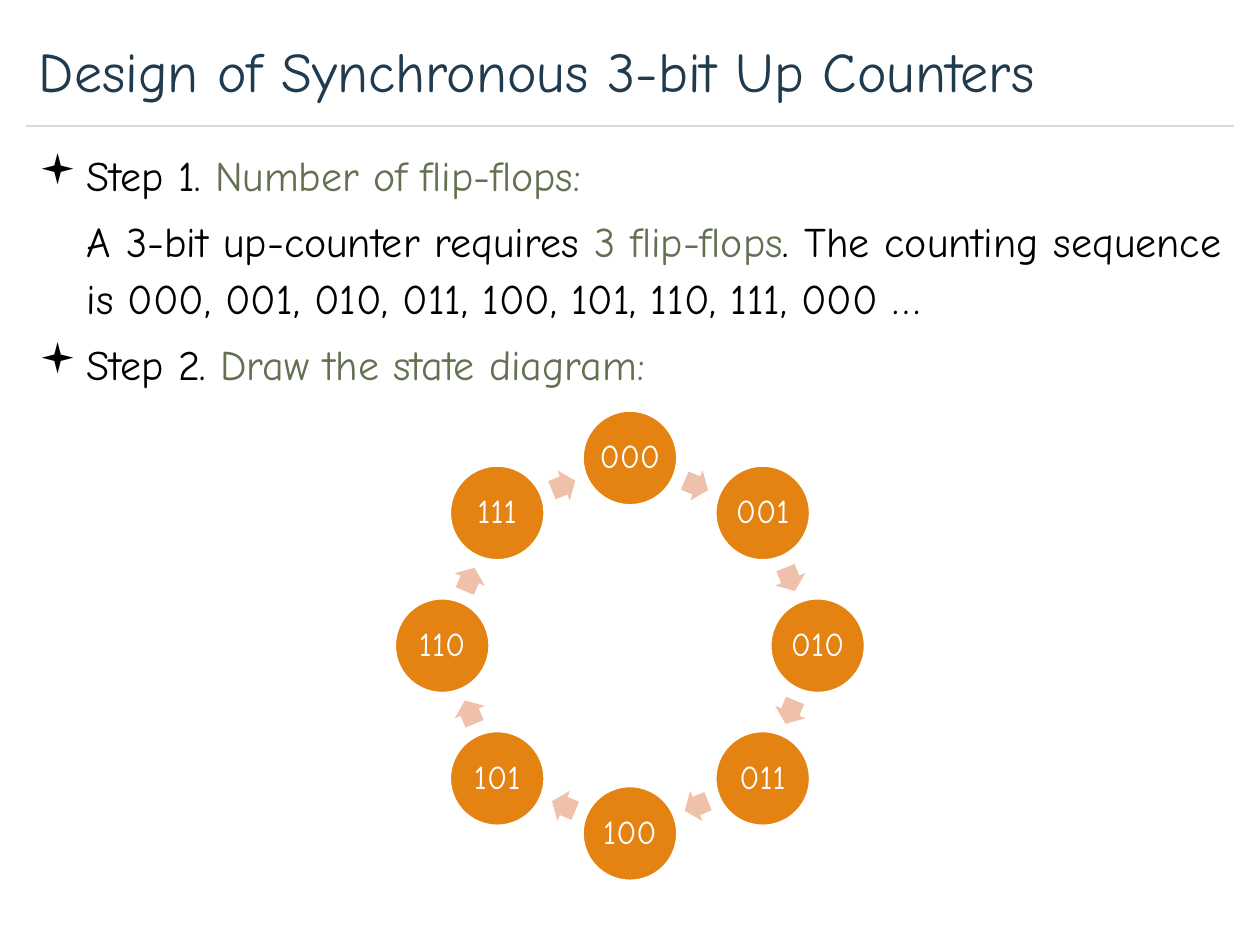
from math import cos, pi, radians, sin

from pptx import Presentation
from pptx.dml.color import RGBColor
from pptx.enum.shapes import MSO_CONNECTOR, MSO_SHAPE
from pptx.enum.text import MSO_ANCHOR, PP_ALIGN
from pptx.oxml.ns import qn
from pptx.util import Inches, Pt
from lxml.etree import SubElement

FONT = "Comic Neue"
NAVY = RGBColor(0x20, 0x3A, 0x4E)
BLACK = RGBColor(0, 0, 0)
OLIVE = RGBColor(0x63, 0x70, 0x52)
ORANGE = RGBColor(0xE4, 0x83, 0x12)
PEACH = RGBColor(0xEF, 0xC1, 0xAB)
WHITE = RGBColor(0xFF, 0xFF, 0xFF)
GREY = RGBColor(0xD9, 0xD9, 0xD9)

WIDTH, HEIGHT = 10, 7.5
MARGIN = 0.21
CONTENT = WIDTH - 2 * MARGIN
RULE_Y = 1

prs = Presentation()
prs.slide_width, prs.slide_height = Inches(WIDTH), Inches(HEIGHT)
slide = prs.slides.add_slide(prs.slide_layouts[6])
shapes = slide.shapes


def style(run, size, color):
    run.font.name = FONT
    run.font.size = Pt(size)
    run.font.color.rgb = color


def add_centred(preset, x, y, width, height, color):
    """Add a filled preset shape whose centre is at x, y."""
    shape = shapes.add_shape(preset, Inches(x - width / 2), Inches(y - height / 2),
                             Inches(width), Inches(height))
    shape.shadow.inherit = False
    shape.fill.solid()
    shape.fill.fore_color.rgb = color
    shape.line.fill.background()
    return shape


# Title and the rule below it
rule = shapes.add_connector(MSO_CONNECTOR.STRAIGHT, Inches(MARGIN), Inches(RULE_Y),
                            Inches(WIDTH - MARGIN), Inches(RULE_Y))
rule.line.color.rgb = GREY
rule.line.width = Pt(0.75)
SubElement(rule._element.spPr, qn("a:effectLst"))

title = shapes.add_textbox(Inches(MARGIN), Inches(0.12), Inches(CONTENT), Inches(0.88)).text_frame
title.word_wrap = True
title.vertical_anchor = MSO_ANCHOR.MIDDLE
title.text = "Design of Synchronous 3-bit Up Counters"
style(title.paragraphs[0].runs[0], 32, NAVY)

# Design steps: (has bullet, coloured pieces)
STEPS = [
    (True, [("Step 1. ", BLACK), ("Number of flip-flops:", OLIVE)]),
    (False, [("A 3-bit up-counter requires ", BLACK), ("3 flip-flops", OLIVE),
             (". The counting sequence is 000, 001, 010, 011, 100, 101, 110, 111, 000 …", BLACK)]),
    (True, [("Step 2. ", BLACK), ("Draw the state diagram:", OLIVE)]),
]
INDENT = Inches(0.38)
steps = shapes.add_textbox(Inches(MARGIN), Inches(1.08), Inches(CONTENT), Inches(2.42)).text_frame
steps.word_wrap = True
for row, (bulleted, pieces) in enumerate(STEPS):
    step = steps.add_paragraph() if row else steps.paragraphs[0]
    step.alignment = PP_ALIGN.JUSTIFY
    step.line_spacing = 1.14
    step.space_before = Pt(4.8)
    for words, color in pieces:
        run = step.add_run()
        run.text = words
        style(run, 24, color)
    props = step._p.get_or_add_pPr()
    props.set("marL", str(INDENT))
    if bulleted:
        props.set("indent", str(-INDENT))
        SubElement(props, qn("a:buFont")).set("typeface", "Wingdings")
        SubElement(props, qn("a:buChar")).set("char", "▪")

# State diagram: eight states clockwise from the top, an arrow between neighbours
STATES = 8
CENTRE_X, CENTRE_Y = WIDTH / 2, 5.125
RADIUS = 1.49
TURN = 360 / STATES
ARROW_RADIUS = RADIUS * cos(pi / STATES)  # middle of the chord between two states
for number in range(STATES):
    angle = radians(number * TURN)
    state = add_centred(MSO_SHAPE.OVAL, CENTRE_X + RADIUS * sin(angle),
                        CENTRE_Y - RADIUS * cos(angle), 0.76, 0.76, ORANGE)
    state.line.color.rgb = WHITE
    state.line.width = Pt(2)
    label = state.text_frame
    label.word_wrap = False
    label.margin_left = label.margin_right = 0
    label.margin_top = label.margin_bottom = Inches(0.03)
    label.vertical_anchor = MSO_ANCHOR.MIDDLE
    label.text = f"{number:03b}"
    label.paragraphs[0].alignment = PP_ALIGN.CENTER
    label.paragraphs[0].line_spacing = 0.9
    style(label.paragraphs[0].runs[0], 19, WHITE)

    heading = (number + 0.5) * TURN
    arrow = add_centred(MSO_SHAPE.RIGHT_ARROW, CENTRE_X + ARROW_RADIUS * sin(radians(heading)),
                        CENTRE_Y - ARROW_RADIUS * cos(radians(heading)), 0.2, 0.26, PEACH)
    arrow.adjustments[0] = 0.6
    arrow.adjustments[1] = 0.5
    arrow.rotation = heading

prs.save("out.pptx")
